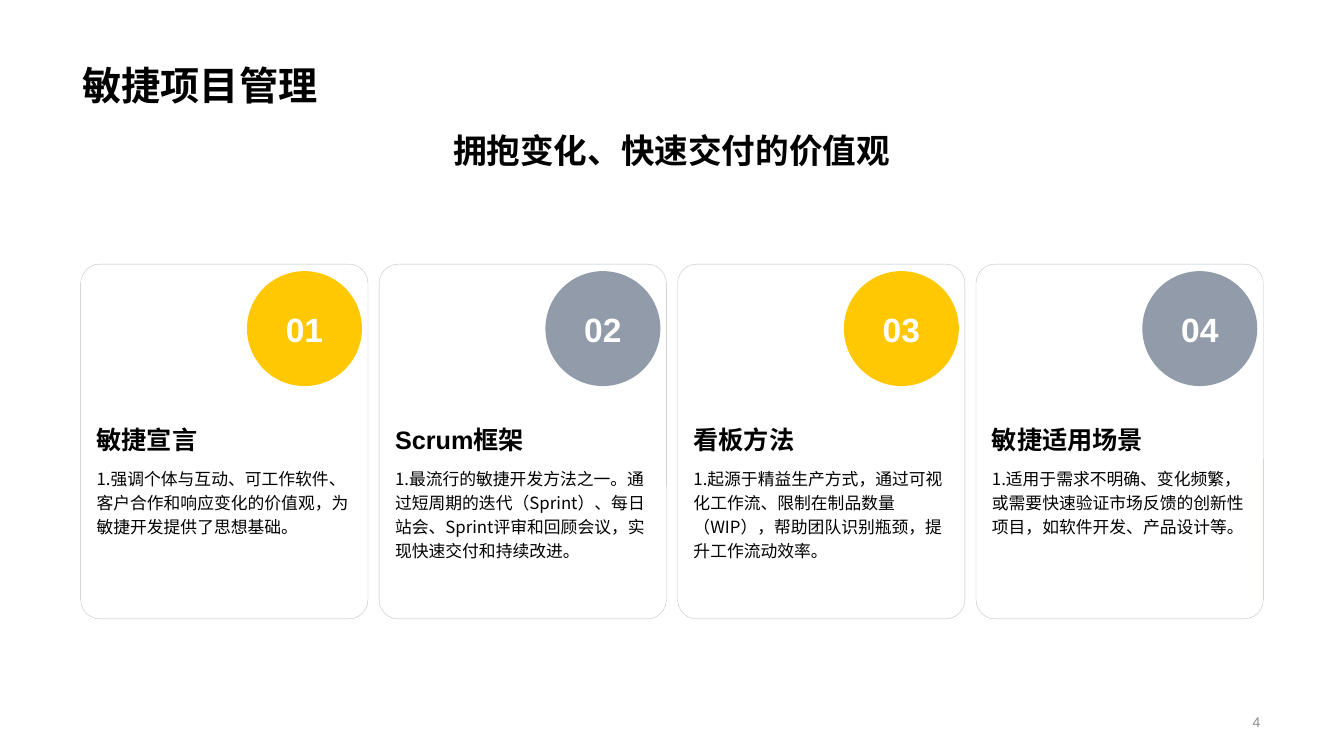
from typing import NamedTuple

from lxml import etree
from pptx import Presentation
from pptx.dml.color import RGBColor
from pptx.enum.shapes import MSO_SHAPE
from pptx.enum.text import MSO_ANCHOR, PP_ALIGN
from pptx.oxml.ns import qn
from pptx.util import Inches, Pt

ROUNDED, OVAL = MSO_SHAPE.ROUNDED_RECTANGLE, MSO_SHAPE.OVAL
TOP, MIDDLE, BOTTOM = MSO_ANCHOR.TOP, MSO_ANCHOR.MIDDLE, MSO_ANCHOR.BOTTOM
LEFT, CENTER, RIGHT = PP_ALIGN.LEFT, PP_ALIGN.CENTER, PP_ALIGN.RIGHT

BLACK = RGBColor(0x00, 0x00, 0x00)
WHITE = RGBColor(0xFF, 0xFF, 0xFF)
GRAY = RGBColor(0x8C, 0x8C, 0x8C)
YELLOW = RGBColor(0xFF, 0xC8, 0x03)
SLATE = RGBColor(0x76, 0x83, 0x94)

SANS = "Noto Sans CJK SC"
ARIAL = "Arial"

CARD_LEFT, CARD_TOP, CARD_WIDTH, CARD_HEIGHT = 0.8, 2.62, 2.85, 3.52
CARD_PITCH = 2.96
BADGE_SIZE = 1.14


class Card(NamedTuple):
    heading: str
    body: str
    heading_font: str = SANS


CARDS = [
    Card("敏捷宣言", "强调个体与互动、可工作软件、客户合作和响应变化的价值观，为敏捷开发提供了思想基础。"),
    Card("Scrum框架", "最流行的敏捷开发方法之一。通过短周期的迭代（Sprint）、每日站会、"
         "Sprint评审和回顾会议，实现快速交付和持续改进。", ARIAL),
    Card("看板方法", "起源于精益生产方式，通过可视化工作流、限制在制品数量（WIP），"
         "帮助团队识别瓶颈，提升工作流动效率。"),
    Card("敏捷适用场景", "适用于需求不明确、变化频繁，或需要快速验证市场反馈的创新性项目，如软件开发、产品设计等。"),
]


def write_text(shape, text: str, *, size: float, font: str = SANS, color: RGBColor = BLACK,
               bold: bool = False, align=LEFT, anchor=TOP, wrap: bool = True,
               spacing: float = 1.0, numbered: bool = False) -> None:
    frame = shape.text_frame
    frame.word_wrap = wrap
    frame.vertical_anchor = anchor
    paragraph = frame.paragraphs[0]
    paragraph.alignment = align
    paragraph.line_spacing = spacing
    if numbered:
        etree.SubElement(paragraph._p.get_or_add_pPr(), qn("a:buAutoNum"), type="arabicPeriod")
    run = paragraph.add_run()
    run.text = text
    run.font.size = Pt(size)
    run.font.bold = bold
    run.font.name = font
    run.font.color.rgb = color
    etree.SubElement(run._r.get_or_add_rPr(), qn("a:ea"), typeface=SANS)


def add_text(slide, left: float, top: float, width: float, height: float,
             text: str, **style) -> None:
    box = slide.shapes.add_textbox(Inches(left), Inches(top), Inches(width), Inches(height))
    write_text(box, text, **style)


def set_opacity(fill, percent: int) -> None:
    color = fill._xPr.find(qn("a:solidFill"))[0]
    etree.SubElement(color, qn("a:alpha"), val=str(percent * 1000))


def add_frame(slide, left: float) -> None:
    frame = slide.shapes.add_shape(ROUNDED, Inches(left), Inches(CARD_TOP),
                                   Inches(CARD_WIDTH), Inches(CARD_HEIGHT))
    frame.shadow.inherit = False
    frame.adjustments[0] = 0.067
    frame.fill.background()
    frame.line.width = Pt(0.25)
    frame.line.color.rgb = SLATE
    set_opacity(frame.line.fill, 50)


def add_badge(slide, left: float, number: int) -> None:
    badge = slide.shapes.add_shape(OVAL, Inches(left), Inches(2.69),
                                   Inches(BADGE_SIZE), Inches(BADGE_SIZE))
    badge.shadow.inherit = False
    badge.line.fill.background()
    badge.fill.solid()
    if number % 2:
        badge.fill.fore_color.rgb = YELLOW
    else:
        badge.fill.fore_color.rgb = SLATE
        set_opacity(badge.fill, 80)
    write_text(badge, f"{number:02d}", size=24, font=ARIAL, color=WHITE, bold=True,
               align=CENTER, anchor=MIDDLE, wrap=False)


def add_card(slide, number: int, card: Card) -> None:
    left = CARD_LEFT + (number - 1) * CARD_PITCH
    add_frame(slide, left)
    add_text(slide, left + 0.06, 4.56, 2.73, 1.46, card.body,
             size=12, spacing=1.2, numbered=True)
    add_text(slide, left + 0.06, 3.83, 2.73, 0.73, card.heading,
             size=18, font=card.heading_font, bold=True, anchor=BOTTOM)
    add_badge(slide, left + 1.65, number)


def main() -> None:
    deck = Presentation()
    deck.slide_width, deck.slide_height = Inches(13.33), Inches(7.5)
    slide = deck.slides.add_slide(deck.slide_layouts[6])
    add_text(slide, 8.6, 7.01, 4, 0.3, "4", size=10, font=ARIAL, color=GRAY,
             align=RIGHT, anchor=MIDDLE)
    add_text(slide, 0.72, 1.24, 11.88, 0.77, "拥抱变化、快速交付的价值观",
             size=24, bold=True, align=CENTER)
    for number, card in enumerate(CARDS, start=1):
        add_card(slide, number, card)
    add_text(slide, 0.72, 0.14, 11.88, 0.98, "敏捷项目管理",
             size=28, bold=True, anchor=BOTTOM)
    deck.save("out.pptx")


if __name__ == "__main__":
    main()
